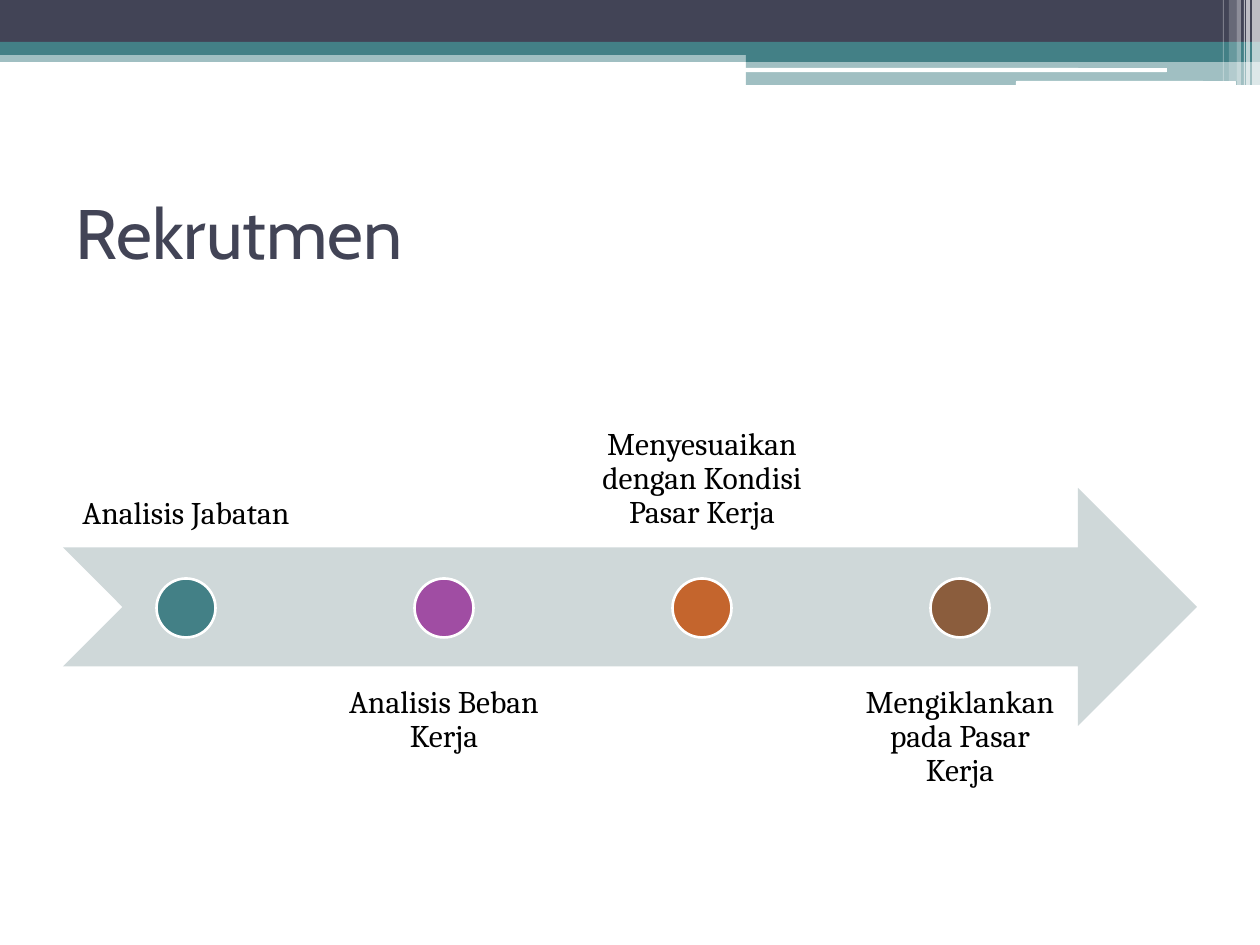
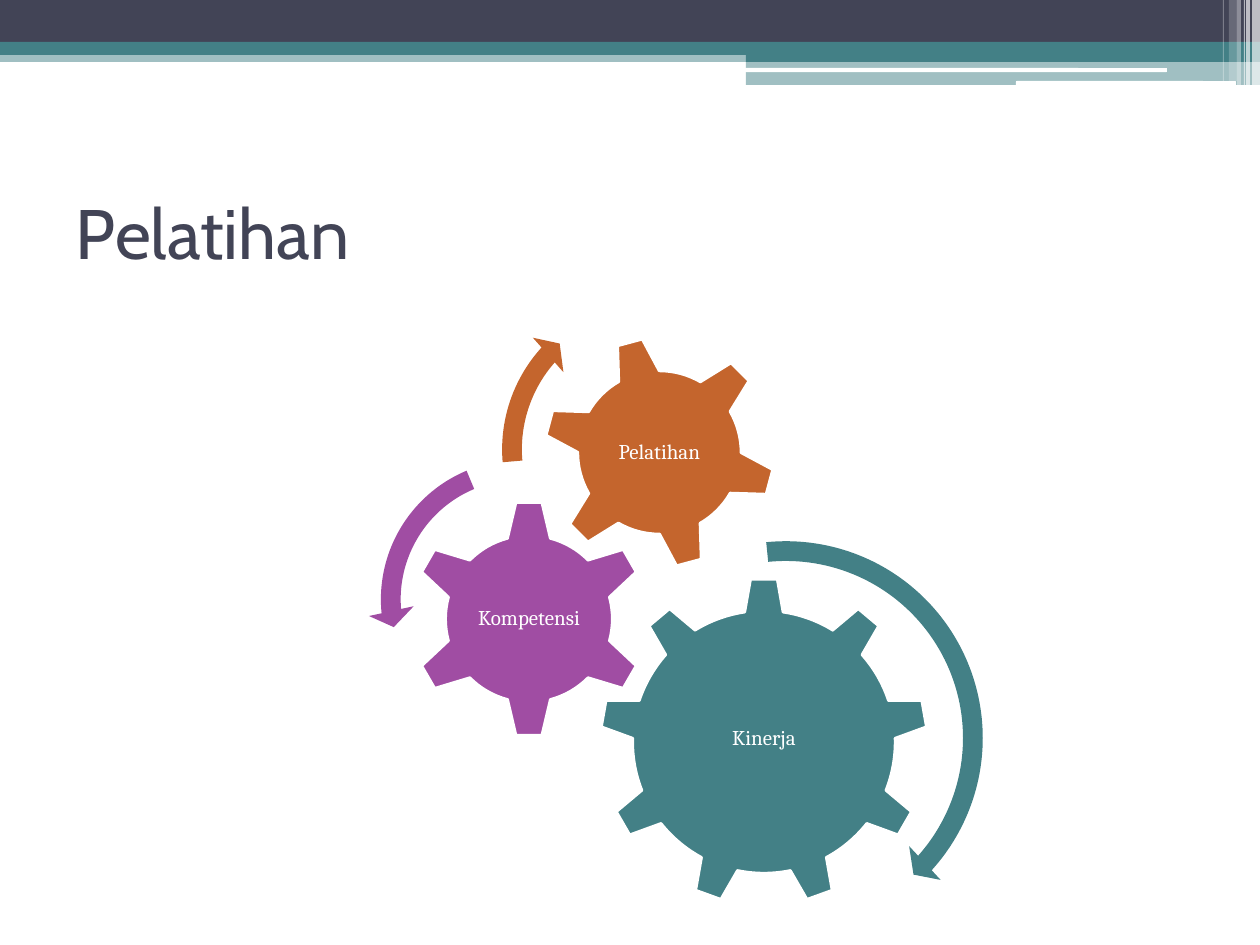
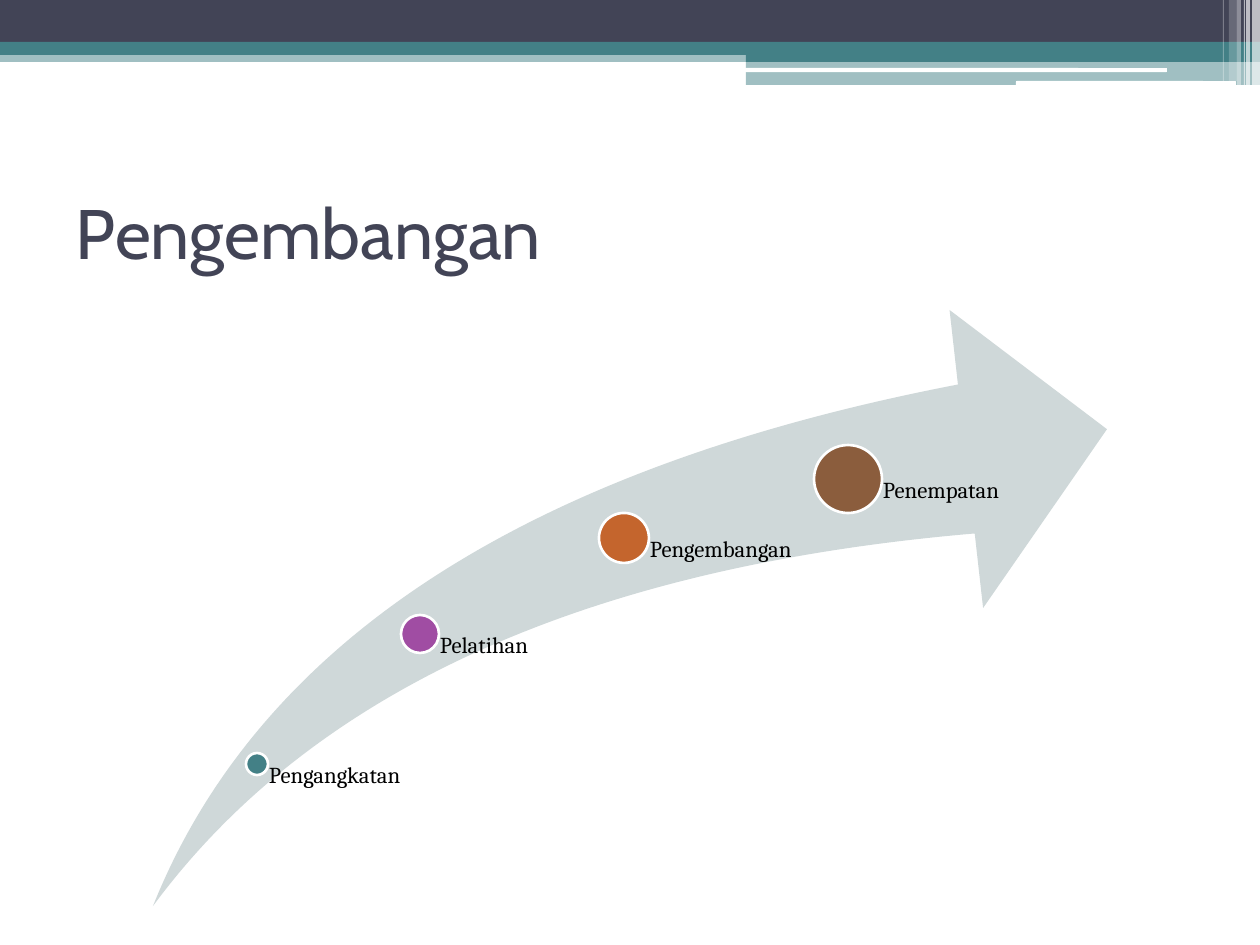
from lxml.etree import SubElement
from pptx import Presentation
from pptx.dml.color import RGBColor
from pptx.enum.shapes import MSO_SHAPE as Preset
from pptx.enum.text import MSO_ANCHOR as Anchor, PP_ALIGN as Align
from pptx.oxml.ns import qn
from pptx.util import Emu, Pt

EMU_PER_PX = 914400 / 126
SLIDE_W, SLIDE_H = 1260, 945
TITLE_BOX = (63, 158, 1134, 147)
DIAGRAM_BOX = (63, 310, 1134, 596)

NAVY, TEAL, PURPLE, ORANGE, BROWN = "424456", "438086", "A04DA3", "C4652D", "8B5D3D"
PALE, WHITE, BLACK = "CFD8D9", "FFFFFF", "000000"
ACCENTS = (TEAL, PURPLE, ORANGE, BROWN)

BANDS = (
    (0, 50, SLIDE_W, 12, TEAL, 50),
    (0, 0, SLIDE_W, 42, NAVY, 100),
    (0, 42, SLIDE_W, 13, TEAL, 100),
    (746, 49, 514, 13, TEAL, 100),
    (746, 62, 514, 23, TEAL, 50),
)
WHITE_RULES = ((745, 68, 422, 4), (1016, 81, 220, 5))
STRIPES = (
    (1252, 8, 85, 65),
    (1246, 4, 85, 65),
    (1244, 1, 85, 60),
    (1237, 4, 85, 40),
    (1229, 8, 81, 20),
    (1223, 1, 81, 30),
)


def px(length):
    return Emu(round(length * EMU_PER_PX))


def color(value):
    return RGBColor.from_string(value)


def add_preset(slide, preset, box, fill, outline=None, opacity=100, adjustments=()):
    shape = slide.shapes.add_shape(preset, *map(px, box))
    shape.shadow.inherit = False
    shape.fill.solid()
    shape.fill.fore_color.rgb = color(fill)
    if opacity < 100:
        tint = shape._element.spPr.find(f".//{qn('a:srgbClr')}")
        SubElement(tint, qn("a:alpha"), val=str(opacity * 1000))
    if outline:
        shape.line.color.rgb = color(outline)
        shape.line.width = Pt(1.5)
    else:
        shape.line.fill.background()
    for index, value in enumerate(adjustments):
        shape.adjustments[index] = value
    return shape


def add_text(slide, box, text, size, fill, font="Cambria", anchor=Anchor.TOP,
             align=Align.LEFT, insets=(0, 0, 0, 0), spacing=0.9):
    frame = slide.shapes.add_textbox(*map(px, box)).text_frame
    frame.word_wrap = True
    frame.vertical_anchor = anchor
    frame.margin_left, frame.margin_top, frame.margin_right, frame.margin_bottom = map(px, insets)
    paragraph = frame.paragraphs[0]
    paragraph.text = text
    paragraph.alignment = align
    paragraph.line_spacing = spacing
    paragraph.font.name = font
    paragraph.font.size = Pt(size)
    paragraph.font.color.rgb = color(fill)


def add_header(slide):
    for *box, fill, opacity in BANDS:
        add_preset(slide, Preset.RECTANGLE, box, fill, opacity=opacity)
    for box in WHITE_RULES:
        add_preset(slide, Preset.ROUNDED_RECTANGLE, box, WHITE)
    for left, width, height, opacity in STRIPES:
        add_preset(slide, Preset.RECTANGLE, (left, 0, width, height), WHITE, opacity=opacity)


def add_dot(slide, center_x, center_y, diameter, fill):
    radius = diameter / 2
    box = (center_x - radius, center_y - radius, diameter, diameter)
    add_preset(slide, Preset.OVAL, box, fill, WHITE)


def draw_recruitment(slide, box):
    left, top, width, height = box
    band_height = height * 2 // 5
    label_width, step, dot_size = 246, 258, 59
    arrow_box = (left, top + height * 3 // 10, width, band_height)
    add_preset(slide, Preset.NOTCHED_RIGHT_ARROW, arrow_box, PALE)
    steps = ("Analisis Jabatan", "Analisis Beban Kerja",
             "Menyesuaikan dengan Kondisi Pasar Kerja", "Mengiklankan pada Pasar Kerja")
    for index, (label, fill) in enumerate(zip(steps, ACCENTS)):
        x = left + index * step
        below = index % 2
        y = top + height - band_height if below else top
        add_text(slide, (x, y, label_width, band_height), label, 18, BLACK,
                 anchor=Anchor.TOP if below else Anchor.BOTTOM,
                 align=Align.CENTER, insets=(18, 18, 18, 18))
        add_dot(slide, x + label_width // 2, top + height // 2, dot_size, fill)


def draw_training(slide, box):
    left, top = box[:2]
    gears = (
        ("Kinerja", Preset.GEAR_9, 537, 268, 328, 0, 3),
        ("Kompetensi", Preset.GEAR_6, 347, 190, 238, 0, 0),
        ("Pelatihan", Preset.GEAR_6, 480, 26, 233, 345, 0),
    )
    for (label, preset, x, y, size, rotation, lift), fill in zip(gears, ACCENTS):
        gear_box = (left + x, top + y, size, size)
        add_preset(slide, preset, gear_box, fill, WHITE).rotation = rotation
        label_box = (left + x + size / 4, top + y + size / 4 - lift, size / 2, size / 2)
        add_text(slide, label_box, label, 12, WHITE, anchor=Anchor.MIDDLE,
                 align=Align.CENTER, insets=(2, 2, 2, 2))
    turns = (
        (Preset.CIRCULAR_ARROW, 513, 218, 420, (0.047, 2.99, 25.192, 158.547, 0.055)),
        (Preset.LEFT_CIRCULAR_ARROW, 305, 137, 305, (0.065, 4.3, 104.891, 148.378, 0.075)),
        (Preset.CIRCULAR_ARROW, 426, -25, 329, (0.06, 3.941, 133.138, 105.082, 0.07)),
    )
    for (preset, x, y, size, adjustments), fill in zip(turns, ACCENTS):
        add_preset(slide, preset, (left + x, top + y, size, size), fill, adjustments=adjustments)


def draw_development(slide, box):
    left, top, width, height = box
    swoosh_width = 954
    left += (width - swoosh_width) // 2
    add_preset(slide, Preset.SWOOSH_ARROW, (left, top, swoosh_width, height), PALE,
               adjustments=(0.25, 0.25))
    stages = (
        ("Pengangkatan", 104, 454, 22, 163),
        ("Pelatihan", 267, 324, 38, 200),
        ("Pengembangan", 471, 228, 50, 200),
        ("Penempatan", 695, 169, 68, 200),
    )
    for (label, x, y, diameter, label_width), fill in zip(stages, ACCENTS):
        add_dot(slide, left + x, top + y, diameter, fill)
        add_text(slide, (left + x, top + y, label_width, height - y), label, 13, BLACK,
                 insets=(diameter // 2 + 1, 0, 0, 0))


def main():
    deck = Presentation()
    deck.slide_width, deck.slide_height = px(SLIDE_W), px(SLIDE_H)
    pages = (("Rekrutmen", draw_recruitment), ("Pelatihan", draw_training),
             ("Pengembangan", draw_development))
    for title, draw_diagram in pages:
        slide = deck.slides.add_slide(deck.slide_layouts[6])
        add_header(slide)
        add_text(slide, TITLE_BOX, title, 40, NAVY, font="Cabin", anchor=Anchor.MIDDLE,
                 insets=(13, 6, 13, 6), spacing=1.0)
        draw_diagram(slide, DIAGRAM_BOX)
    deck.save("out.pptx")


if __name__ == "__main__":
    main()
